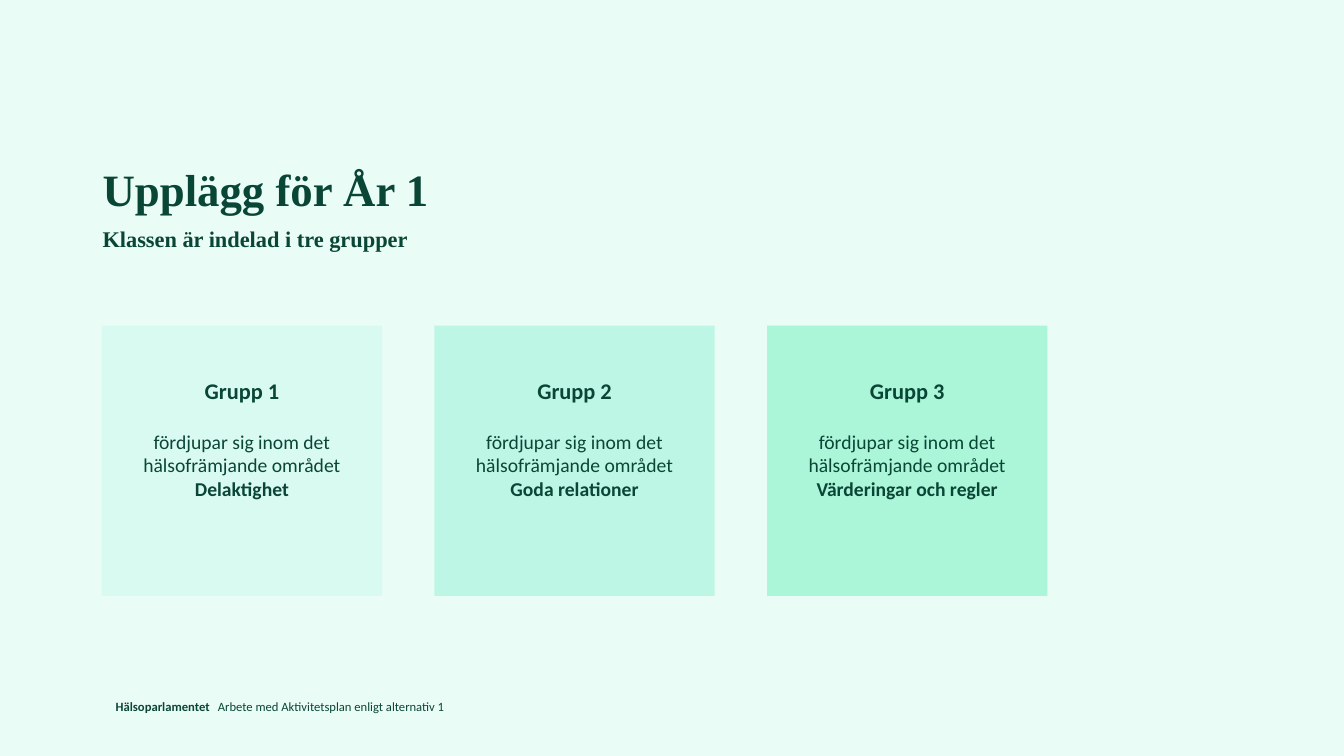
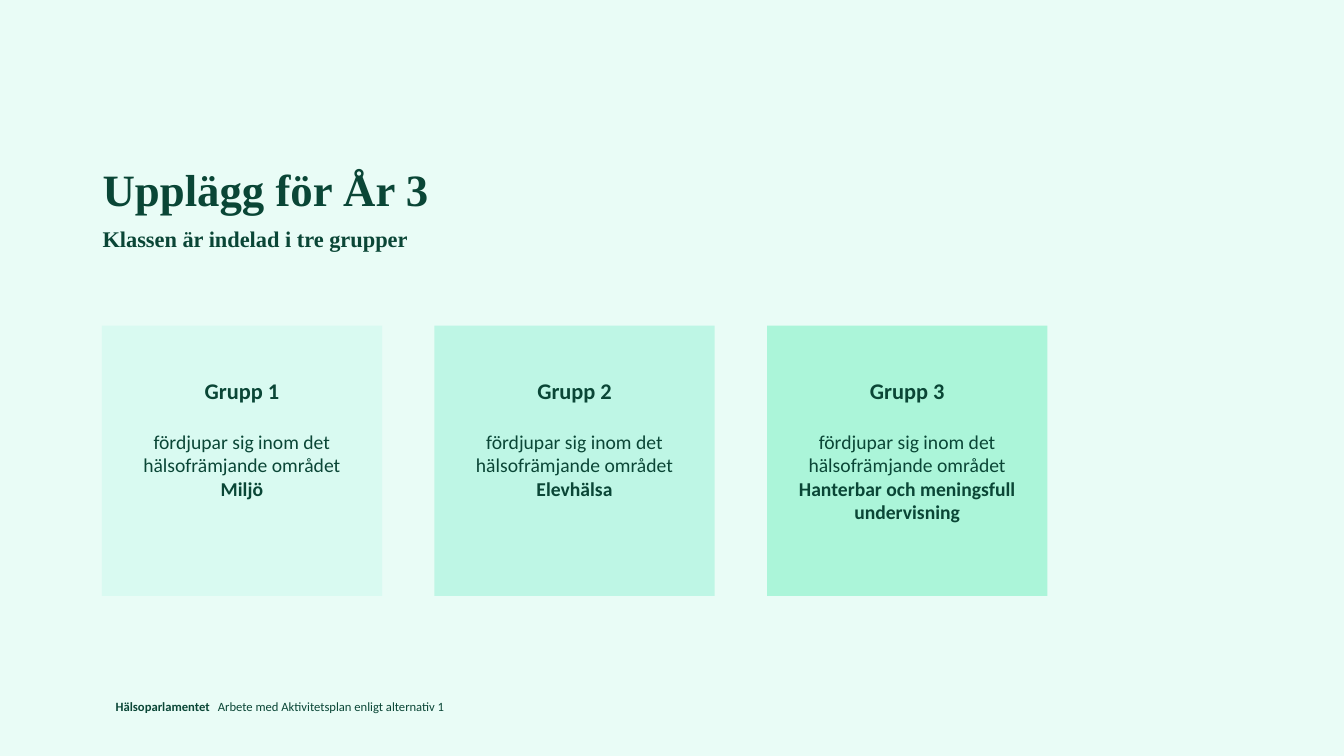
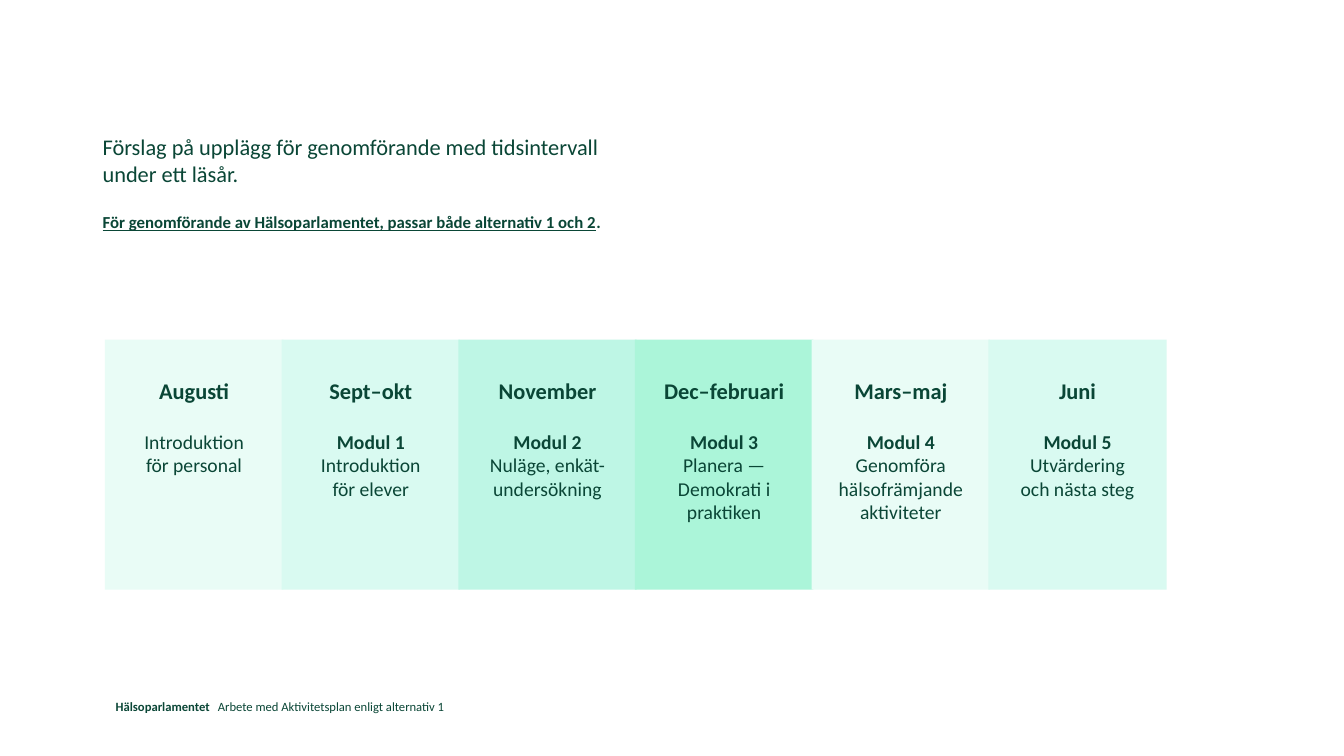
import pptx
import pptx.dml.color
import pptx.enum.shapes
import pptx.enum.text
import pptx.oxml
import pptx.oxml.ns
import pptx.util

Pt = pptx.util.Pt
Align = pptx.enum.text.PP_ALIGN
INK = "0A4636"
PALE, LIGHT, MEDIUM, STRONG = "E9FCF6", "D9FAF1", "BEF6E5", "ABF5D9"
SERIF, SANS = "Times New Roman", "Calibri"


def color(value):
    return pptx.dml.color.RGBColor.from_string(value)


class HealthDeck:
    """Holds the shared style and the slide being built."""

    def __init__(self):
        self.deck = pptx.Presentation()
        self.deck.slide_width, self.deck.slide_height = Pt(960), Pt(540)
        self.page = None

    def new_page(self, background):
        self.page = self.deck.slides.add_slide(self.deck.slide_layouts[6])
        self.page.background.fill.solid()
        self.page.background.fill.fore_color.rgb = color(background)
        self.footer()

    def text_box(self, left, top, width, height):
        frame = self.page.shapes.add_textbox(Pt(left), Pt(top), Pt(width), Pt(height)).text_frame
        frame.word_wrap = True
        return frame

    def style(self, para, size, bold=False, face=SANS, after=0, align=Align.LEFT):
        para.alignment = align
        para.space_after = Pt(after)
        para.font.name = face
        para.font.size = Pt(size)
        para.font.bold = bold
        para.font.color.rgb = color(INK)

    def footer(self):
        frame = self.text_box(75.6, 495.4, 520.6, 18)
        para = frame.paragraphs[0]
        tabs = pptx.oxml.parse_xml(
            f'<a:tabLst {pptx.oxml.ns.nsdecls("a")}><a:tab pos="{Pt(73)}" algn="l"/></a:tabLst>')
        para._p.get_or_add_pPr().append(tabs)
        self.style(para, 9)
        name = para.add_run()
        name.text = "Hälsoparlamentet"
        name.font.bold = True
        para.add_run().text = "\tArbete med Aktivitetsplan enligt alternativ 1"

    def heading(self, text, top, height, size):
        para = self.text_box(66.2, top, 539, height).paragraphs[0]
        para.text = text
        self.style(para, size, bold=True, face=SERIF)

    def introduction(self, text, emphasis):
        frame = self.text_box(66.2, 91.4, 384, 104)
        para = frame.paragraphs[0]
        para.text = text
        self.style(para, 16, after=18)
        para = frame.add_paragraph()
        self.style(para, 12, bold=True)
        span = para.add_run()
        span.text = emphasis
        span.font.underline = True
        para.add_run().text = "."

    def card(self, left, top, width, height, fill, title, lines):
        box = self.page.shapes.add_shape(
            pptx.enum.shapes.MSO_SHAPE.RECTANGLE, Pt(left), Pt(top), Pt(width), Pt(height))
        box.shadow.inherit = False
        box.fill.solid()
        box.fill.fore_color.rgb = color(fill)
        box.line.fill.background()
        frame = box.text_frame
        frame.word_wrap = True
        frame.vertical_anchor = pptx.enum.text.MSO_ANCHOR.TOP
        frame.margin_left = frame.margin_right = Pt(18.6)
        frame.margin_top = Pt(260 - top)
        para = frame.paragraphs[0]
        para.text = title
        para.line_spacing = 1.5
        self.style(para, 16, bold=True, after=18, align=Align.CENTER)
        for text, bold in lines:
            para = frame.add_paragraph()
            para.text = text
            self.style(para, 14, bold=bold, align=Align.CENTER)

    def card_row(self, left, top, width, height, step, cards):
        for index, (fill, title, lines) in enumerate(cards):
            self.card(left + index * step, top, width, height, fill, title, lines)

    def group_page(self, year, areas):
        self.new_page(PALE)
        self.heading(f"Upplägg för År {year}", 112, 46, 32)
        self.heading("Klassen är indelad i tre grupper", 157, 30, 16)
        cards = [
            (fill, f"Grupp {number}",
             [("fördjupar sig inom det hälsofrämjande området", False), (area, True)])
            for number, (fill, area) in enumerate(zip((LIGHT, MEDIUM, STRONG), areas), 1)
        ]
        self.card_row(72.7, 232.6, 200.2, 193, 237.6, cards)

    def schedule_page(self, periods):
        self.new_page("FFFFFF")
        self.introduction(
            "Förslag på upplägg för genomförande med tidsintervall under ett läsår.",
            "För genomförande av Hälsoparlamentet, passar både alternativ 1 och 2")
        fills = (PALE, LIGHT, MEDIUM, STRONG, PALE, LIGHT)
        cards = []
        for module, (fill, (period, activity)) in enumerate(zip(fills, periods)):
            lines = [(f"Modul {module}", True)] if module else []
            cards.append((fill, period, lines + [(activity, False)]))
        self.card_row(75, 242.6, 127.4, 178.6, 126.2, cards)


def main():
    health = HealthDeck()
    health.group_page(1, ("Delaktighet", "Goda relationer", "Värderingar och regler"))
    health.group_page(3, ("Miljö", "Elevhälsa", "Hanterbar och meningsfull undervisning"))
    health.schedule_page((
        ("Augusti", "Introduktion för personal"),
        ("Sept–okt", "Introduktion för elever"),
        ("November", "Nuläge, enkät-undersökning"),
        ("Dec–februari", "Planera — Demokrati i praktiken"),
        ("Mars–maj", "Genomföra hälsofrämjande aktiviteter"),
        ("Juni", "Utvärdering och nästa steg"),
    ))
    health.deck.save("out.pptx")


if __name__ == "__main__":
    main()
